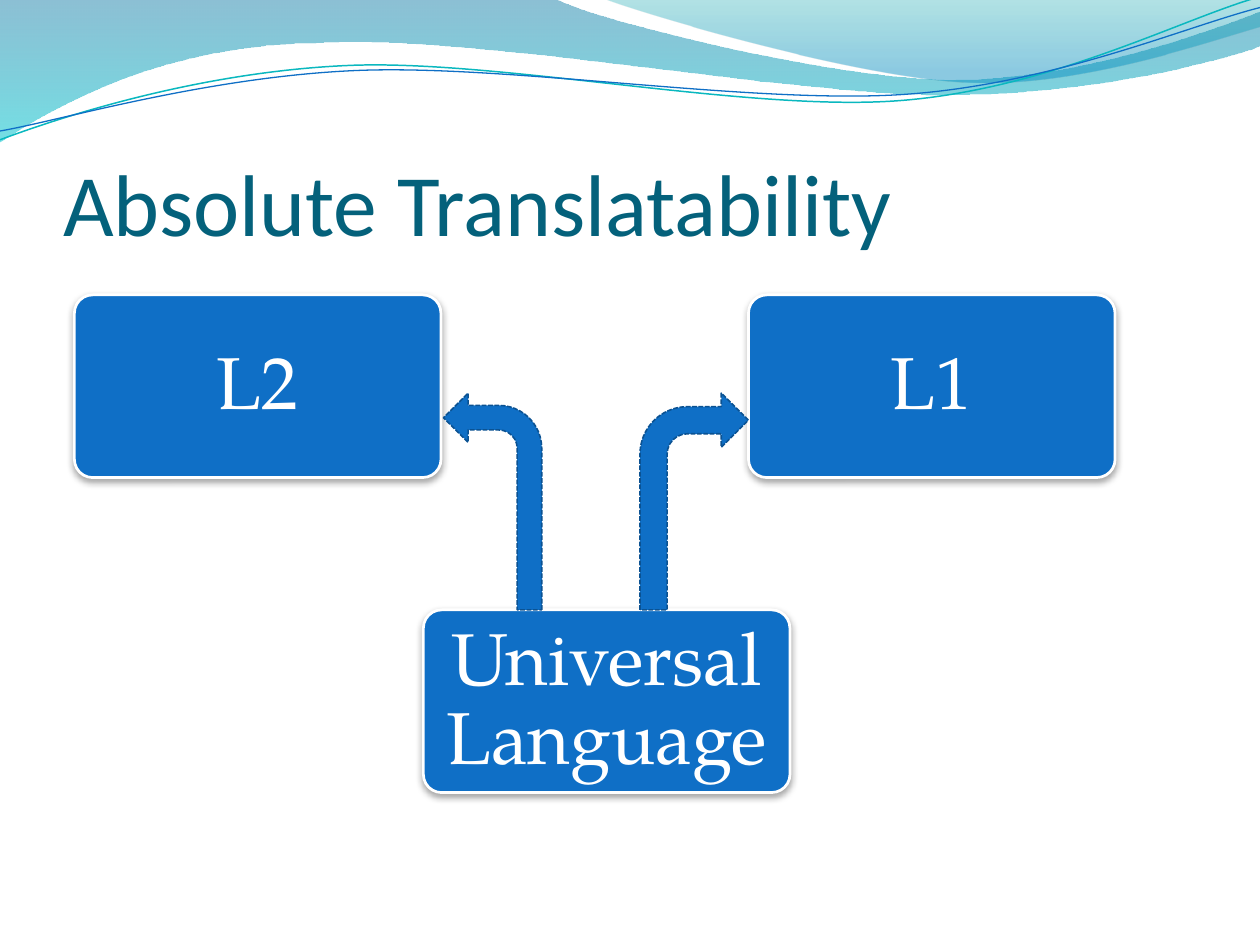
from pptx import Presentation
from pptx.dml.color import RGBColor
from pptx.enum.dml import MSO_LINE as Dash
from pptx.enum.shapes import MSO_SHAPE as Kind
from pptx.enum.text import MSO_ANCHOR as Anchor, PP_ALIGN as Align
from pptx.oxml.ns import qn
from pptx.util import Inches, Pt
from lxml.etree import SubElement as Sub

BLUE = "0F6FC6"
BAND = [(0, -0.01), (4.4, -0.01), (4.76, 0.17, 6.64, 0.63, 7.58, 0.63),
        (8.53, 0.63, 9.58, 0.26, 10, 0.09), (10.01, 0.36),
        (9.83, 0.44, 8.7, 0.76, 7.46, 0.75), (6.22, 0.75, 3.82, 0.28, 2.57, 0.34),
        (1.29, 0.35, 0.46, 0.83, -0.01, 1.13), (0, -0.01)]
CREST = [(4.79, -0.01), (5.09, 0.11, 6.82, 0.62, 7.69, 0.65),
         (8.56, 0.69, 9.61, 0.32, 10, 0.21), (10, 0), (4.79, -0.01)]
TEAL = [(0, 1.11), (0.48, 0.93, 1.58, 0.57, 2.77, 0.52),
        (3.95, 0.47, 5.93, 0.89, 7.13, 0.8), (8.33, 0.71, 9.38, 0.15, 9.98, -0.02)]
NAVY = [(0, 1.04), (0.47, 0.96, 1.64, 0.61, 2.83, 0.56),
        (4.03, 0.51, 5.97, 0.83, 7.17, 0.75), (8.36, 0.67, 9.41, 0.21, 10, 0.06)]


def color(code):
    """Turn a hex string into a colour."""
    return RGBColor.from_string(code)


def add_curve(slide, segs, close):
    """Draw a freeform whose six-number segments are Bezier curves."""
    flat = [Inches(n) for seg in segs for n in seg]
    pts = list(zip(flat[::2], flat[1::2]))
    pen = slide.shapes.build_freeform(*pts[0])
    pen.add_line_segments(pts[1:], close=close)
    shape = pen.convert_to_shape()
    shape.shadow.inherit = False
    lines = iter(list(shape._element.spPr.iter(qn("a:lnTo"))))
    for seg in segs[1:]:
        first = next(lines)
        if len(seg) == 6:
            first.tag = qn("a:cubicBezTo")
            for _ in range(2):
                extra = next(lines)
                first.append(extra[0])
                extra.getparent().remove(extra)
    return shape


def add_wave(slide, segs, stops):
    """Draw a closed wave with a translucent vertical gradient."""
    shape = add_curve(slide, segs, True)
    shape.line.fill.background()
    shape.fill.gradient()
    shape.fill.gradient_angle = 270
    for stop, (pos, code, _) in zip(shape.fill.gradient_stops, stops):
        stop.position = pos
        stop.color.rgb = color(code)
    for node, (_, _, alpha) in zip(shape._element.spPr.iter(qn("a:gs")), stops):
        Sub(node[0], qn("a:alpha"), val=str(alpha * 1000))


def add_strand(slide, segs, code, width):
    """Draw a thin open curve."""
    shape = add_curve(slide, segs, False)
    shape.fill.background()
    shape.line.color.rgb = color(code)
    shape.line.width = Pt(width)


def set_title(slide, text):
    """Fill and place the title."""
    title = slide.shapes.title
    title.left, title.top, title.width, title.height = map(Inches, (0.5, 0.77, 9, 1.25))
    frame = title.text_frame
    frame.text = text
    frame.vertical_anchor = Anchor.BOTTOM
    frame.margin_left = frame.margin_right = frame.margin_bottom = 0
    para = frame.paragraphs[0]
    para.alignment = Align.LEFT
    para.font.size, para.font.name = Pt(50), "Calibri"
    para.font.color.rgb = color("04617B")


def add_block(slide, kind, box, edge, width):
    """Add a blue preset shape with an outline."""
    shape = slide.shapes.add_shape(kind, *map(Inches, box))
    shape.shadow.inherit = False
    shape.fill.solid()
    shape.fill.fore_color.rgb = color(BLUE)
    shape.line.color.rgb = color(edge)
    shape.line.width = Pt(width)
    return shape


def add_box(slide, text, left, top):
    """Add a labelled rounded box with a soft shadow."""
    shape = add_block(slide, Kind.ROUNDED_RECTANGLE, (left, top, 2.91, 1.45), "FFFFFF", 1.57)
    shape.adjustments[0] = 0.1
    glow = Sub(shape._element.spPr.find(qn("a:effectLst")), qn("a:outerShdw"),
               blurRad=str(Pt(4)), dist=str(Pt(2)), dir="5400000", rotWithShape="0")
    Sub(Sub(glow, qn("a:srgbClr"), val="000000"), qn("a:alpha"), val="35000")
    frame = shape.text_frame
    frame.word_wrap = True
    frame.vertical_anchor = Anchor.MIDDLE
    frame.margin_left = frame.margin_right = Inches(0.03)
    frame.margin_top = frame.margin_bottom = Inches(0.03)
    frame.text = text
    para = frame.paragraphs[0]
    para.alignment, para.line_spacing = Align.CENTER, 0.9
    para.font.size, para.font.name = Pt(42), "TeX Gyre Pagella"
    para.font.color.rgb = color("FFFFFF")


def add_arrow(slide, left, width, flip=False):
    """Add a dashed bent arrow, mirrored on demand."""
    shape = add_block(slide, Kind.BENT_ARROW, (left, 3.12, width, 1.72), "0B5292", 0.9)
    shape.line.dash_style = Dash.SQUARE_DOT
    if flip:
        shape._element.spPr.xfrm.set("flipH", "1")


def main():
    """Build and save the slide."""
    deck = Presentation()
    deck.slide_width, deck.slide_height = Inches(10), Inches(7.5)
    slide = deck.slides.add_slide(deck.slide_layouts[5])
    add_wave(slide, BAND, [(0, "0074A1", 45), (1, "00C6CF", 55)])
    add_wave(slide, CREST, [(0, "00A1A9", 30), (0.8, "008BBF", 45)])
    add_strand(slide, TEAL, "0AB8BF", 0.85)
    add_strand(slide, NAVY, BLUE, 0.75)
    set_title(slide, "Absolute Translatability")
    add_box(slide, "L1", 5.94, 2.34)
    add_box(slide, "L2", 0.59, 2.34)
    add_box(slide, "Universal Language", 3.36, 4.84)
    add_arrow(slide, 5.08, 0.86)
    add_arrow(slide, 3.52, 0.78, flip=True)
    deck.save("out.pptx")


if __name__ == "__main__":
    main()
